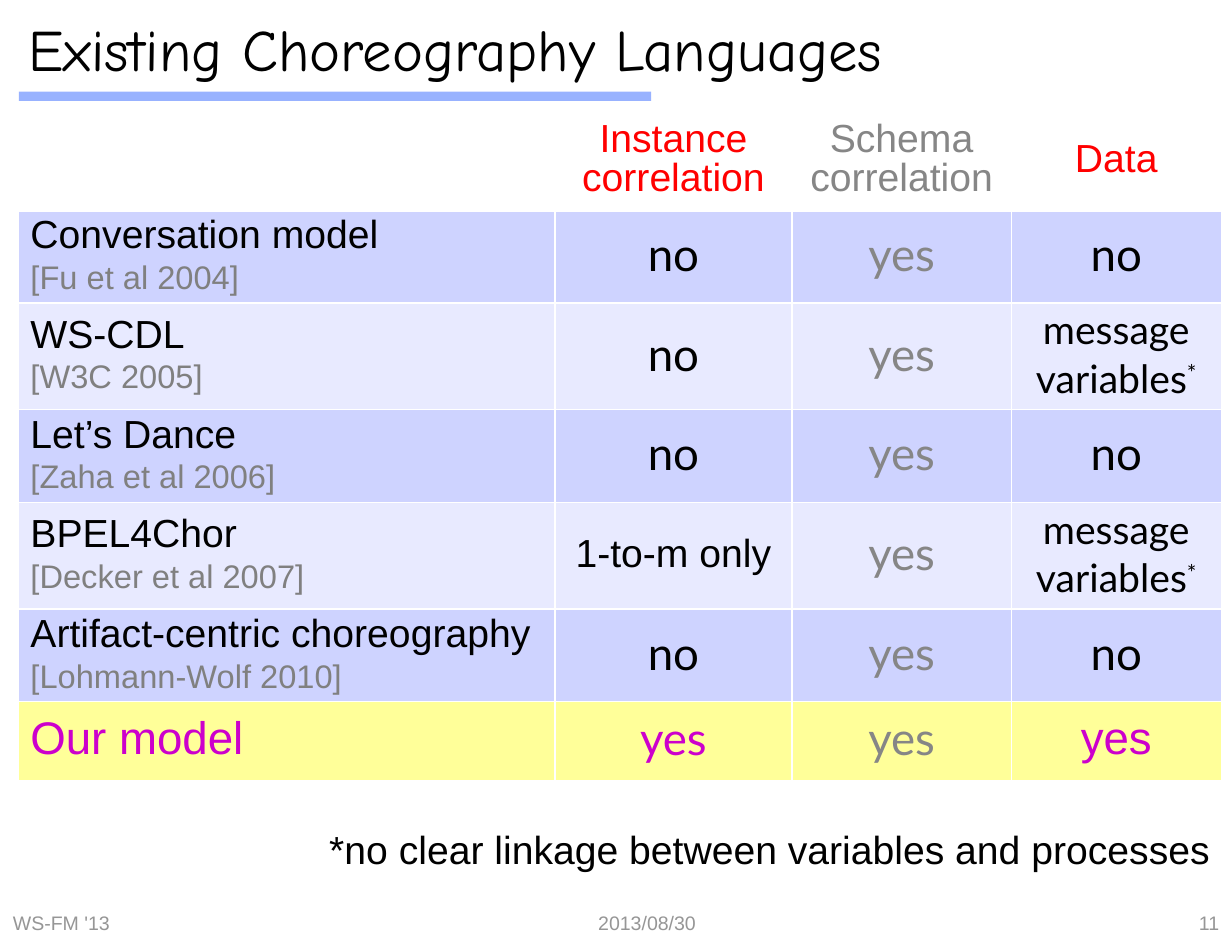
"""Build a slide that compares choreography languages in a table."""
from lxml import etree
from pptx import Presentation, util as u
from pptx.dml.color import RGBColor
from pptx.enum import shapes, text
from pptx.oxml.ns import qn

BLACK, GREY, RED, PURPLE = "000000", "868686", "FF0000", "CC00CC"
WHITE, DARK, LIGHT, YELLOW = "FFFFFF", "CED3FF", "E8EAFF", "FFFF99"
CITE, FOOT = "808080", "969696"
LEFT, CENTER, RIGHT = text.PP_ALIGN.LEFT, text.PP_ALIGN.CENTER, text.PP_ALIGN.RIGHT

W, H = 10.5, 8
TABLE_LEFT, TABLE_TOP = 0.16, 0.94
COLUMNS = [4.57, 2.02, 1.87, 1.79]
HEAD_H, ROW_H, TALL_H, LAST_H = 0.85, 0.79, 0.91, 0.67


def label(name, source):
    return [(name, 24, "Arial", BLACK), (source, 20, "Arial", CITE)]


NO = [("no", 28, "Lato", BLACK)]
YES = [("yes", 28, "Lato", GREY)]
VARIABLES = [("message", 24, "Lato", BLACK), ("variables*", 24, "Lato", BLACK)]
HEADER = [[]] + [[(name, 24, "Arial", color)] for name, color in [
    ("Instance\vcorrelation", RED), ("Schema\vcorrelation", GREY), ("Data", RED)]]
ROWS = [
    (HEAD_H, None, HEADER),
    (ROW_H, DARK, [label("Conversation model", "[Fu et al 2004]"), NO, YES, NO]),
    (TALL_H, LIGHT, [label("WS-CDL", "[W3C 2005]"), NO, YES, VARIABLES]),
    (ROW_H, DARK, [label("Let’s Dance", "[Zaha et al 2006]"), NO, YES, NO]),
    (TALL_H, LIGHT, [label("BPEL4Chor", "[Decker et al 2007]"),
                     [("1-to-m only", 24, "Arial", BLACK)], YES, VARIABLES]),
    (ROW_H, DARK, [label("Artifact-centric choreography", "[Lohmann-Wolf 2010]"), NO, YES, NO]),
    (LAST_H, YELLOW, [[("Our model", 28, "Arial", PURPLE)], [("yes", 28, "Lato", PURPLE)],
                      YES, [("yes", 28, "Arial", PURPLE)]]),
]
TEXTS = [
    ("Existing Choreography Languages", (0.13, -0.07, 10.28, 0.95), 36, "Comic Neue", BLACK, LEFT),
    ("*no clear linkage between variables and processes", (0.17, 7, 10.25, 0.47),
     24, "Arial", BLACK, RIGHT),
    ("2013/08/30", (4.42, 7.73, 2.19, 0.27), 12, "Arial", FOOT, CENTER),
    ("WS-FM '13", (0, 7.73, 3.33, 0.27), 12, "Arial", FOOT, LEFT),
    ("11", (8.31, 7.73, 2.19, 0.27), 12, "Arial", FOOT, RIGHT),
]


def rgb(color):
    return RGBColor.from_string(color)


def box(*lengths):
    return [u.Inches(n) for n in lengths]


def style(p, size, font, color, align):
    p.alignment = align
    p.font.size, p.font.name = u.Pt(size), font
    p.font.color.rgb = rgb(color)


def add_borders(cell, bottom):
    tc_pr = cell._tc.get_or_add_tcPr()
    for i, (side, width) in enumerate([("L", 1), ("R", 1), ("T", 1), ("B", bottom)]):
        ln = etree.Element(qn(f"a:ln{side}"), w=str(u.Pt(width)))
        fill = etree.SubElement(ln, qn("a:solidFill"))
        etree.SubElement(fill, qn("a:srgbClr"), val=WHITE)
        tc_pr.insert(i, ln)


def fill_cell(cell, lines, fill, align, bottom):
    cell.vertical_anchor = text.MSO_ANCHOR.MIDDLE
    if fill:
        cell.fill.solid()
        cell.fill.fore_color.rgb = rgb(fill)
    else:
        cell.fill.background()
    tf = cell.text_frame
    for i, (words, size, font, color) in enumerate(lines):
        p = tf.add_paragraph() if i else tf.paragraphs[0]
        p.text = words.rstrip("*")
        if words.endswith("*"):
            r = p.add_run()
            r.text = "*"
            r.font._element.set("baseline", "30000")
        style(p, size, font, color, align)
        p.line_spacing, p.space_before = 0.9, u.Pt(4)
    add_borders(cell, bottom)


def add_table(s):
    heights = [row[0] for row in ROWS]
    frame = s.shapes.add_table(len(ROWS), len(COLUMNS),
                               *box(TABLE_LEFT, TABLE_TOP, sum(COLUMNS), sum(heights)))
    table = frame.table
    table.first_row = table.horz_banding = False
    for column, width in zip(table.columns, COLUMNS):
        column.width = u.Inches(width)
    for i, (height, fill, cells) in enumerate(ROWS):
        table.rows[i].height = u.Inches(height)
        for j, lines in enumerate(cells):
            fill_cell(table.cell(i, j), lines, fill, CENTER if j else LEFT, 1 if i else 3)


def add_text(s, words, place, size, font, color, align):
    tf = s.shapes.add_textbox(*box(*place)).text_frame
    tf.word_wrap = True
    tf.vertical_anchor = text.MSO_ANCHOR.MIDDLE
    tf.margin_left = tf.margin_right = u.Inches(0.11)
    p = tf.paragraphs[0]
    p.text = words
    style(p, size, font, color, align)


def add_title_bar(s):
    sp = s.shapes.add_shape(shapes.MSO_SHAPE.RECTANGLE, *box(0.16, 0.78, 5.39, 0.08))
    sp.shadow.inherit = False
    sp.line.fill.background()
    sp.fill.solid()
    sp.fill.fore_color.rgb = rgb("3366FF")
    color = sp._element.spPr.find(f".//{qn('a:srgbClr')}")
    etree.SubElement(color, qn("a:alpha"), val="50000")


def main():
    prs = Presentation()
    prs.slide_width, prs.slide_height = box(W, H)
    s = prs.slides.add_slide(prs.slide_layouts[6])
    add_title_bar(s)
    add_table(s)
    for item in TEXTS:
        add_text(s, *item)
    prs.save("out.pptx")


if __name__ == "__main__":
    main()
